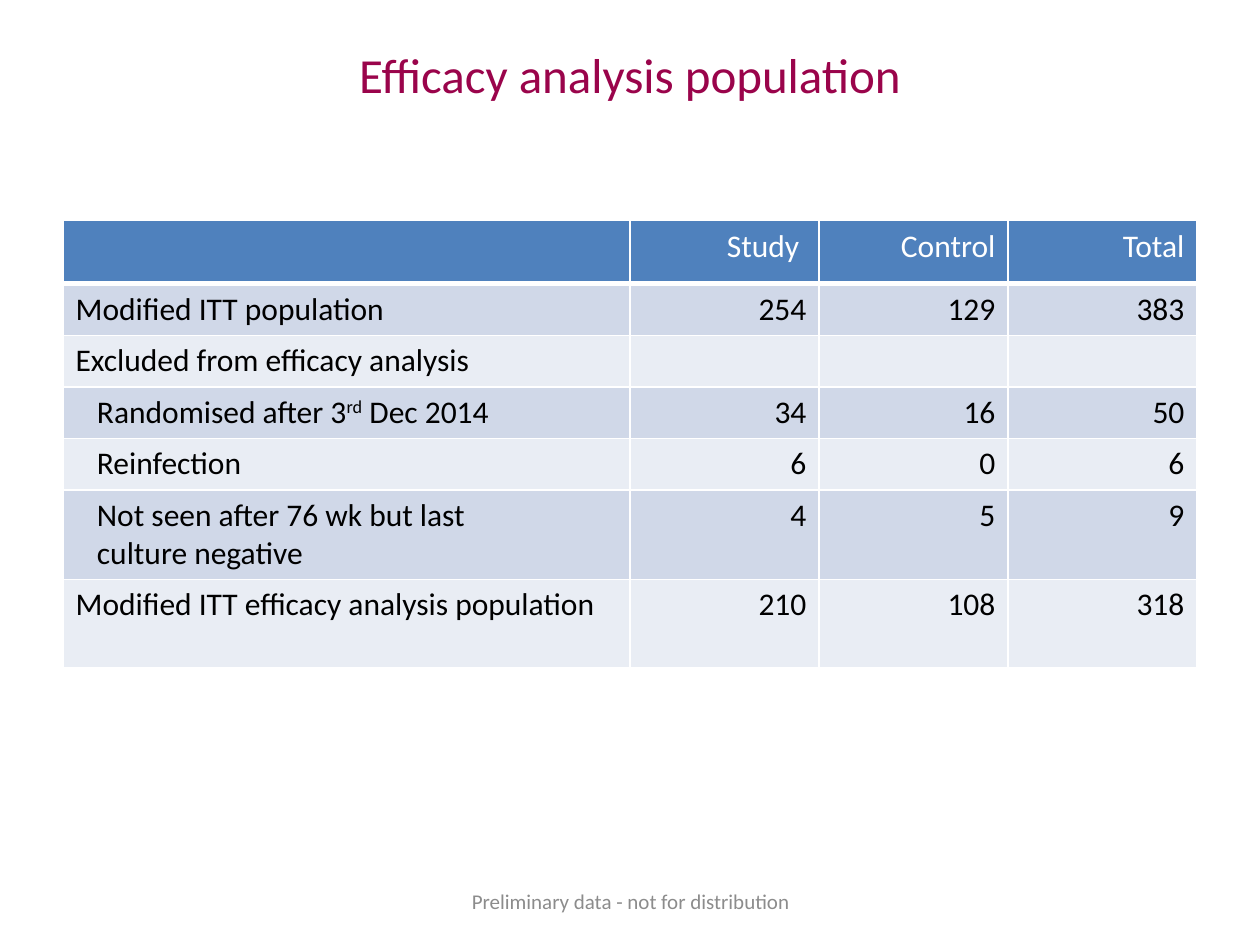
from dataclasses import dataclass

from lxml.etree import SubElement
from pptx import Presentation
from pptx.dml.color import RGBColor
from pptx.enum.text import MSO_ANCHOR, PP_ALIGN
from pptx.oxml.ns import qn
from pptx.util import Cm, Pt

FONT = "Calibri"
COLOURS = {
    "title": "9A044B",
    "header": "4F81BD",
    "dark band": "D0D8E8",
    "light band": "E9EDF4",
    "white": "FFFFFF",
    "text": "000000",
    "footer": "8C8C8C",
}
COLUMN_WIDTHS = (11.43, 3.81, 3.81, 3.81)
INDENT = Cm(0.43)


@dataclass
class Row:
    label: str
    values: tuple[str, ...] = ("", "", "")
    height: float = 1.04
    indented: bool = False
    superscript: str = ""


HEADER = Row("", ("Study", "Control", "Total"), height=1.27)
BODY = (
    Row("Modified ITT population", ("254", "129", "383")),
    Row("Excluded from efficacy analysis"),
    Row("Randomised after 3rd Dec 2014", ("34", "16", "50"),
        indented=True, superscript="rd"),
    Row("Reinfection", ("6", "0", "6"), indented=True),
    Row("Not seen after 76 wk but last\nculture negative", ("4", "5", "9"),
        height=1.78, indented=True),
    Row("Modified ITT efficacy analysis population", ("210", "108", "318"),
        height=1.78),
)


def rgb(name: str) -> RGBColor:
    return RGBColor.from_string(COLOURS[name])


def format_text(frame, size: float, colour: str, align: PP_ALIGN) -> None:
    for para in frame.paragraphs:
        para.alignment = align
        para.font.size = Pt(size)
        for span in para.runs:
            span.font.name = FONT
            span.font.size = Pt(size)
            span.font.bold = False
            span.font.color.rgb = rgb(colour)


def add_borders(cell, bottom_width: float) -> None:
    properties = cell._tc.get_or_add_tcPr()
    for side, width in (("L", 1), ("R", 1), ("T", 1), ("B", bottom_width)):
        line = SubElement(properties, qn(f"a:ln{side}"), w=str(Pt(width)))
        fill = SubElement(line, qn("a:solidFill"))
        SubElement(fill, qn("a:srgbClr"), val=COLOURS["white"])


def raise_text(para, raised: str) -> None:
    """Split the paragraph into runs and superscript the given letters."""
    before, after = para.text.split(raised, 1)
    para.text = before
    span = para.add_run()
    span.text = raised
    span._r.get_or_add_rPr().set("baseline", "30000")
    para.add_run().text = after


def fill_row(table, index: int, row: Row, fill: str, colour: str,
             bottom_width: float = 1) -> None:
    table.rows[index].height = Cm(row.height)
    for column, text in enumerate((row.label, *row.values)):
        cell = table.cell(index, column)
        add_borders(cell, bottom_width)
        cell.fill.solid()
        cell.fill.fore_color.rgb = rgb(fill)
        frame = cell.text_frame
        frame.text = text
        if column == 0:
            for para in frame.paragraphs:
                if row.indented:
                    para._p.get_or_add_pPr().set("marL", str(INDENT))
                if row.superscript:
                    raise_text(para, row.superscript)
        align = PP_ALIGN.RIGHT if column else PP_ALIGN.LEFT
        format_text(frame, 18, colour, align)


def main() -> None:
    deck = Presentation()
    deck.slide_width, deck.slide_height = Cm(25.4), Cm(19.05)
    page = deck.slides.add_slide(deck.slide_layouts[5])

    # Title
    title = page.shapes.title
    title.left, title.top = Cm(1.27), Cm(0.76)
    title.width, title.height = Cm(22.86), Cm(3.18)
    title.text_frame.text = "Efficacy analysis population"
    title.text_frame.vertical_anchor = MSO_ANCHOR.TOP
    format_text(title.text_frame, 28, "title", PP_ALIGN.CENTER)

    # Population table
    rows = (HEADER, *BODY)
    table = page.shapes.add_table(
        len(rows), len(COLUMN_WIDTHS), Cm(1.27), Cm(4.45),
        Cm(sum(COLUMN_WIDTHS)), Cm(sum(row.height for row in rows))).table
    for column, width in zip(table.columns, COLUMN_WIDTHS):
        column.width = Cm(width)
    fill_row(table, 0, HEADER, "header", "white", bottom_width=3)
    for index, row in enumerate(BODY, start=1):
        band = "dark band" if index % 2 else "light band"
        fill_row(table, index, row, band, "text")
    table.cell(0, 1).margin_right = Cm(0.4)

    # Footer
    box = page.shapes.add_textbox(Cm(8.69), Cm(17.65), Cm(8.05), Cm(1.02))
    box.text_frame.word_wrap = True
    box.text_frame.vertical_anchor = MSO_ANCHOR.MIDDLE
    box.text_frame.text = "Preliminary data - not for distribution"
    format_text(box.text_frame, 12, "footer", PP_ALIGN.CENTER)

    deck.save("out.pptx")


if __name__ == "__main__":
    main()
